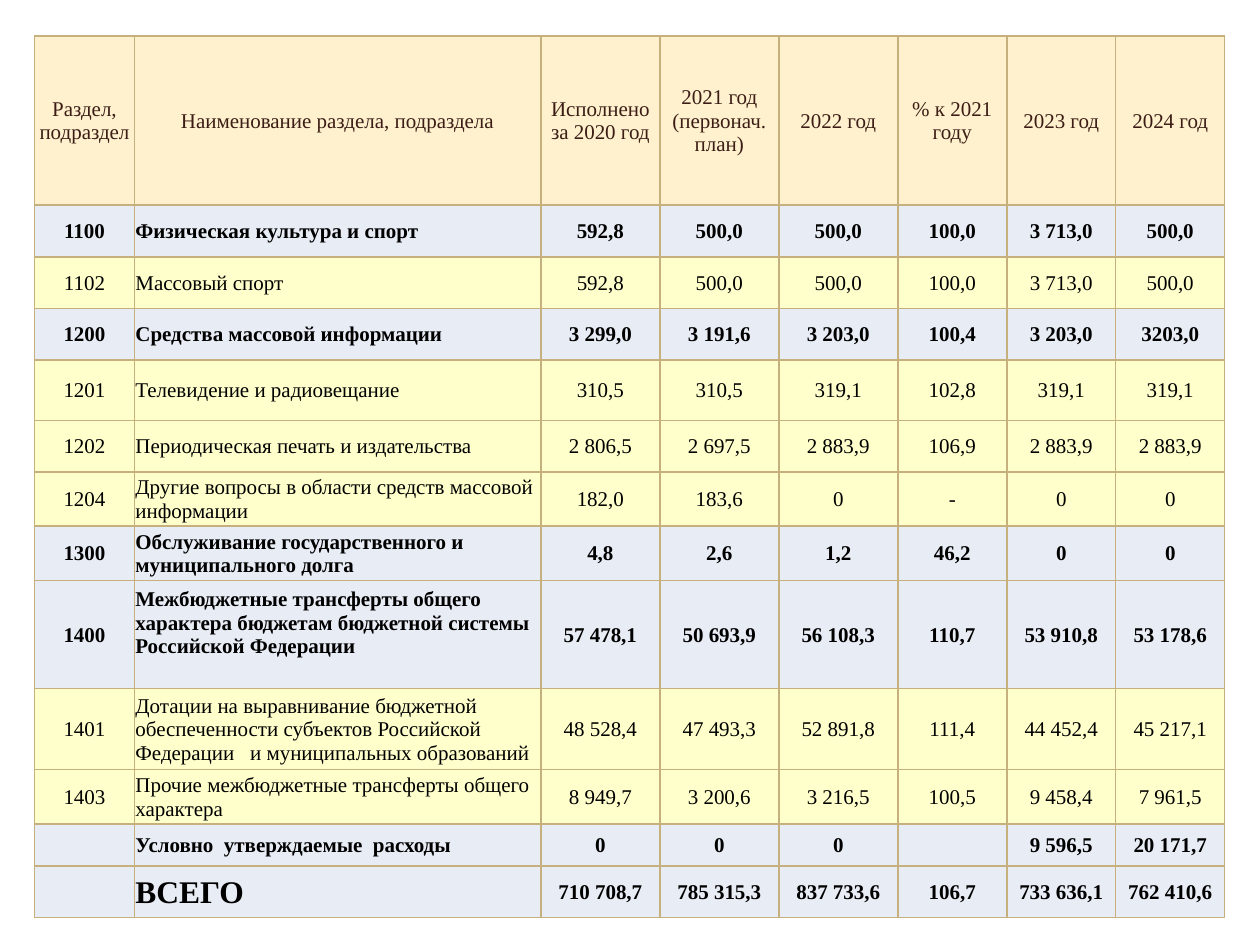
from lxml import etree
from pptx import Presentation
from pptx.dml.color import RGBColor
from pptx.enum import text
from pptx.oxml import ns
from pptx.util import Pt

COLORS = {"header": "FFF1CE", "section": "E8ECF4", "item": "FFFFCC",
          "border": "C6B07E", "header_text": "3B1D15", "text": "000000"}
COL_WIDTHS = [57, 232.3] + [68] * 3 + [62.3] * 3
ROWS = [  # height, then the cell texts
    (96.6, "Раздел, подраздел", "Наименование раздела, подраздела", "Исполнено за 2020 год",
     "2021 год (первонач. план)", "2022 год", "% к 2021 году", "2023 год", "2024 год"),
    (29.5, "1100", "Физическая культура и спорт",
     "592,8", "500,0", "500,0", "100,0", "3 713,0", "500,0"),
    (29.5, "1102", "Массовый спорт",
     "592,8", "500,0", "500,0", "100,0", "3 713,0", "500,0"),
    (29.5, "1200", "Средства массовой информации",
     "3 299,0", "3 191,6", "3 203,0", "100,4", "3 203,0", "3203,0"),
    (34.5, "1201", "Телевидение и радиовещание",
     "310,5", "310,5", "319,1", "102,8", "319,1", "319,1"),
    (29.5, "1202", "Периодическая печать и издательства",
     "2 806,5", "2 697,5", "2 883,9", "106,9", "2 883,9", "2 883,9"),
    (31, "1204", "Другие вопросы в области средств массовой информации",
     "182,0", "183,6", "0", "-", "0", "0"),
    (31, "1300", "Обслуживание государственного и муниципального долга",
     "4,8", "2,6", "1,2", "46,2", "0", "0"),
    (61.8, "1400", "Межбюджетные трансферты общего характера бюджетам "
     "бюджетной системы Российской Федерации",
     "57 478,1", "50 693,9", "56 108,3", "110,7", "53 910,8", "53 178,6"),
    (46.4, "1401", "Дотации на выравнивание бюджетной обеспеченности субъектов "
     "Российской Федерации   и муниципальных образований",
     "48 528,4", "47 493,3", "52 891,8", "111,4", "44 452,4", "45 217,1"),
    (31, "1403", "Прочие межбюджетные трансферты общего характера",
     "8 949,7", "3 200,6", "3 216,5", "100,5", "9 458,4", "7 961,5"),
    (24.1, "", "Условно  утверждаемые  расходы",
     "0", "0", "0", "", "9 596,5", "20 171,7"),
    (29.5, "", "ВСЕГО",
     "710 708,7", "785 315,3", "837 733,6", "106,7", "733 636,1", "762 410,6"),
]


def add_borders(cell):
    tc_pr = cell._tc.get_or_add_tcPr()
    for side in ("a:lnL", "a:lnR", "a:lnT", "a:lnB"):
        ln = etree.SubElement(tc_pr, ns.qn(side), w=str(Pt(1)))
        fill = etree.SubElement(ln, ns.qn("a:solidFill"))
        etree.SubElement(fill, ns.qn("a:srgbClr"), val=COLORS["border"])


prs = Presentation()
prs.slide_width, prs.slide_height = Pt(720), Pt(540)
s = prs.slides.add_slide(prs.slide_layouts[6])

frame = s.shapes.add_table(len(ROWS), len(COL_WIDTHS), Pt(19.8), Pt(20.7),
                           Pt(sum(COL_WIDTHS)), Pt(sum(row[0] for row in ROWS)))
table = frame.table
for column, width in zip(table.columns, COL_WIDTHS):
    column.width = Pt(width)

for i, (height, *values) in enumerate(ROWS):
    table.rows[i].height = Pt(height)
    code = values[0]
    if i == 0:
        kind = "header"
    elif not code or code.endswith("00"):
        kind = "section"
    else:
        kind = "item"

    for j, value in enumerate(values):
        cell = table.cell(i, j)
        add_borders(cell)
        cell.fill.solid()
        cell.fill.fore_color.rgb = RGBColor.from_string(COLORS[kind])
        cell.vertical_anchor = text.MSO_ANCHOR.MIDDLE
        cell.margin_left = cell.margin_right = cell.margin_top = Pt(0.6)
        # The long section name stands one line above the bottom of its row
        cell.margin_bottom = Pt(13.8 if code == "1400" and j == 1 else 0)

        cell.text = value
        p = cell.text_frame.paragraphs[0]
        name_cell = kind != "header" and j == 1
        p.alignment = text.PP_ALIGN.LEFT if name_cell else text.PP_ALIGN.CENTER
        p.font.name = "Times New Roman"
        p.font.size = Pt(18 if value == "ВСЕГО" else 12)
        p.font.bold = kind == "section"
        text_color = COLORS["header_text" if kind == "header" else "text"]
        p.font.color.rgb = RGBColor.from_string(text_color)

prs.save("out.pptx")
